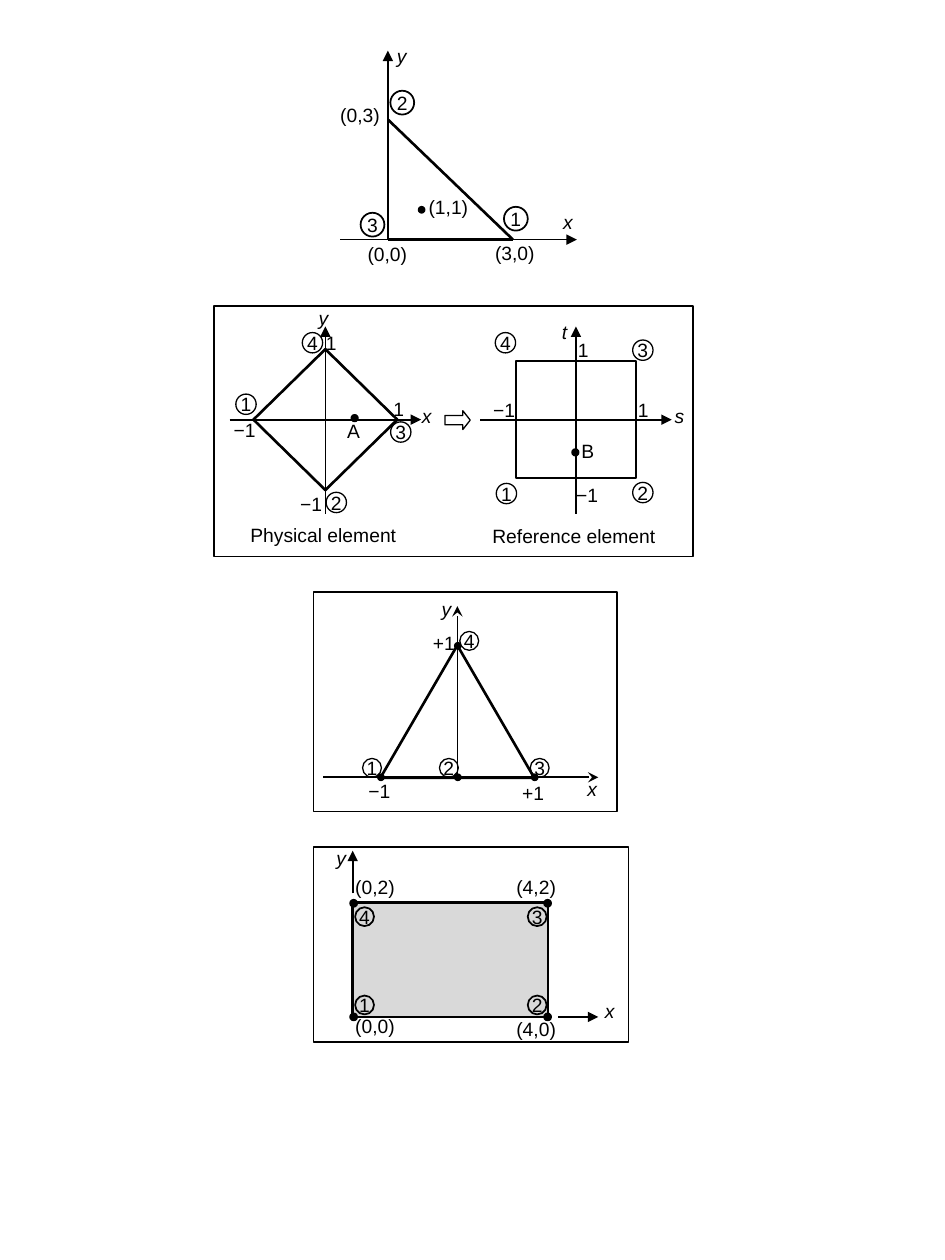
from itertools import product

from lxml.etree import SubElement
from pptx import Presentation
from pptx.dml.color import RGBColor
from pptx.enum.shapes import MSO_CONNECTOR, MSO_SHAPE as Shape
from pptx.enum.text import MSO_ANCHOR as Anchor, PP_ALIGN as Align
from pptx.oxml.ns import qn
from pptx.util import Cm, Pt

BLACK = RGBColor(0x00, 0x00, 0x00)
WHITE = RGBColor(0xFF, 0xFF, 0xFF)
GREY = RGBColor(0xD9, 0xD9, 0xD9)
FONT = "Arial"


class Figure:
    """A group of parts placed in centimetres from the corner of its box."""

    def __init__(self, page, box):
        """Open an empty group for the given box."""
        self.shapes = page.shapes.add_group_shape().shapes
        self.left, self.top, self.width, self.height = box

    def point(self, x, y):
        """Turn a place in the box into a place on the page."""
        return Cm(self.left + x), Cm(self.top + y)

    def style(self, shape, fill, weight):
        """Give a shape its fill and black outline."""
        shape.shadow.inherit = False
        if fill is None:
            shape.fill.background()
        else:
            shape.fill.solid()
            shape.fill.fore_color.rgb = fill
        shape.line.color.rgb = BLACK
        shape.line.width = Pt(weight)

    def letter(self, shape, text, align, italic=False):
        """Put one line of text in a shape."""
        frame = shape.text_frame
        frame.word_wrap = False
        frame.margin_left = frame.margin_right = 0
        frame.margin_top = frame.margin_bottom = 0
        para = frame.paragraphs[0]
        para.text = text
        para.alignment = align
        font = para.font
        font.name, font.size, font.italic = FONT, Pt(11), italic
        font.color.rgb = BLACK

    def shape(self, kind, x, y, width, height, fill=None, weight=1):
        """Add a preset shape by its top left corner."""
        shape = self.shapes.add_shape(kind, *self.point(x, y), Cm(width), Cm(height))
        self.style(shape, fill, weight)
        return shape

    def border(self):
        """Frame the whole box."""
        self.shape(Shape.RECTANGLE, 0, 0, self.width, self.height)

    def disc(self, x, y, size, fill=None, weight=0.75):
        """Add a circle by its centre."""
        return self.shape(Shape.OVAL, x - size / 2, y - size / 2, size, size, fill, weight)

    def dot(self, x, y, size=0.13):
        """Mark a point."""
        self.disc(x, y, size, BLACK)

    def node(self, number, x, y, size=0.38, weight=0.75):
        """Add a circled node number by its centre."""
        ring = self.disc(x, y, size, weight=weight)
        self.letter(ring, number, Align.CENTER)
        ring.text_frame.vertical_anchor = Anchor.MIDDLE

    def label(self, text, x, y, width=0.51, height=0.43, align=Align.CENTER):
        """Add a label, with axis names in italics."""
        box = self.shapes.add_textbox(*self.point(x, y), Cm(width), Cm(height))
        self.letter(box, text, align, italic=text in ("x", "y", "s", "t"))

    def line(self, start, end, weight=1, head=None):
        """Draw a straight line, with an arrowhead if one is named."""
        line = self.shapes.add_connector(
            MSO_CONNECTOR.STRAIGHT, *self.point(*start), *self.point(*end))
        line.line.color.rgb = BLACK
        line.line.width = Pt(weight)
        properties = line.element.spPr
        if head:
            SubElement(properties.find(qn("a:ln")), qn("a:tailEnd"), type=head)
        SubElement(properties, qn("a:effectLst"))

    def polygon(self, corners):
        """Outline a closed element."""
        first, *rest = [self.point(*corner) for corner in corners]
        builder = self.shapes.build_freeform(*first)
        builder.add_line_segments(rest, close=True)
        self.style(builder.convert_to_shape(), None, 1.5)


def draw_right_triangle(page, box):
    """Draw the three-node triangle on its axes."""
    figure = Figure(page, box)
    origin, right, top = (1.19, 3.94), (3.71, 3.94), (1.19, 1.52)
    figure.line(origin, (1.19, 0.13), head="triangle")
    figure.line((0.23, 3.94), (5, 3.94), head="triangle")
    for start, end in ((right, top), (origin, top), (origin, right)):
        figure.line(start, end, 1.5)
    for text, x, y in (("(0,0)", 0.78, 3.99), ("(3,0)", 3.35, 3.97),
                       ("(0,3)", 0.23, 1.2), ("(1,1)", 2.01, 3.05)):
        figure.label(text, x, y, 0.81, 0.48, Align.LEFT)
    for number, x, y in (("1", 3.77, 3.52), ("3", 0.88, 3.64), ("2", 1.48, 1.18)):
        figure.node(number, x, y, 0.48, 1)
    figure.dot(1.87, 3.34)
    figure.label("x", 4.72, 3.35, 0.2, 0.48)
    figure.label("y", 1.37, 0, 0.2, 0.48)


def draw_mapping(page, box):
    """Draw the physical element mapped to the reference element."""
    figure = Figure(page, box)
    middle, physical, reference = 2.29, 2.24, 7.29
    for centre in (physical, reference):
        figure.line((centre - 1.93, middle), (centre + 1.93, middle), head="triangle")
        figure.line((centre, 4.19), (centre, 0.41), head="triangle")
    diamond = ((0, -1.42), (-1.45, 0), (0, 1.42), (1.45, 0))
    square = ((-1.21, 1.18), (-1.21, -1.18), (1.21, -1.18), (1.21, 1.18))
    for centre, corners in ((physical, diamond), (reference, square)):
        figure.polygon([(centre + x, middle + y) for x, y in corners])
    for text, x, y in (("−1", 1.7, 3.76), ("−1", 0.36, 2.26),
                       ("−1", 7.26, 3.58), ("−1", 5.59, 1.85)):
        figure.label(text, x, y)
    for text, x, y in (("1", 3.53, 1.83), ("1", 2.17, 0.51), ("1", 8.46, 1.85),
                       ("1", 7.25, 0.64), ("y", 2.01, 0), ("x", 4.09, 1.98),
                       ("s", 9.19, 1.98), ("t", 6.87, 0.28),
                       ("A", 2.62, 2.29), ("B", 7.34, 2.69)):
        figure.label(text, x, y, 0.38)
    figure.dot(2.83, 2.26, 0.14)
    figure.dot(7.28, 2.95, 0.14)
    for number, x, y in (("1", 0.64, 1.98), ("2", 2.46, 3.96), ("3", 3.76, 2.54),
                         ("4", 1.98, 0.74), ("1", 5.89, 3.78), ("2", 8.64, 3.76),
                         ("3", 8.64, 0.89), ("4", 5.87, 0.74)):
        figure.node(number, x, y, 0.41)
    arrow = figure.shape(Shape.RIGHT_ARROW, 4.65, 2.11, 0.51, 0.38, WHITE, 0.75)
    arrow.adjustments[1] = 0.39
    figure.label("Physical element", 0.36, 4.37, 3.68, 0.56)
    figure.label("Reference element", 5.41, 4.39, 3.68, 0.56)
    figure.border()


def draw_collapsed_triangle(page, box):
    """Draw the four-node triangle with a node in the middle of its base."""
    figure = Figure(page, box)
    figure.shape(Shape.ISOSCELES_TRIANGLE, 1.35, 1.07, 3.1, 2.67, weight=1.5)
    figure.line((0.2, 3.73), (5.74, 3.73), head="stealth")
    figure.line((2.9, 3.73), (2.9, 0.28), head="stealth")
    for text, x, y in (("−1", 1.04, 3.76), ("+1", 4.14, 3.81), ("+1", 2.34, 0.79),
                       ("x", 5.33, 3.73), ("y", 2.39, 0.1)):
        figure.label(text, x, y, 0.58, 0.48)
    for number, x, y in (("1", 1.18, 3.54), ("2", 2.73, 3.54),
                         ("3", 4.56, 3.54), ("4", 3.14, 0.98)):
        figure.node(number, x, y)
    for x, y in ((1.36, 3.73), (2.91, 3.73), (4.46, 3.73), (2.91, 1.08)):
        figure.dot(x, y)
    figure.border()


def draw_rectangle(page, box):
    """Draw the shaded four-node rectangle."""
    figure = Figure(page, box)
    figure.shape(Shape.RECTANGLE, 0.79, 1.12, 3.94, 2.31, GREY, 1.5)
    for x, y in product((0.81, 4.72), (1.14, 3.43)):
        figure.dot(x, y, 0.15)
    for number, (y, x) in zip("4312", product((1.41, 3.19), (1.03, 4.51))):
        figure.node(number, x, y, weight=1)
    figure.line((4.93, 3.43), (5.74, 3.43), head="triangle")
    figure.line((0.79, 0.94), (0.79, 0.08), head="triangle")
    figure.label("x", 5.87, 3.07, 0.2, 0.56)
    figure.label("y", 0.46, 0, 0.2, 0.56)
    figure.border()
    for text, x, y in (("(0,2)", 0.84, 0.58), ("(4,2)", 4.09, 0.58),
                       ("(0,0)", 0.84, 3.38), ("(4,0)", 4.09, 3.43)):
        figure.label(text, x, y, 0.81, 0.48, Align.LEFT)


def main():
    """Build the page of finite element figures."""
    deck = Presentation()
    deck.slide_width, deck.slide_height = Cm(19.05), Cm(25.4)
    page = deck.slides.add_slide(deck.slide_layouts[6])
    draw_right_triangle(page, (6.63, 0.89, 5, 4.52))
    draw_mapping(page, (4.32, 6.17, 9.65, 5.05))
    draw_rectangle(page, (6.32, 17.07, 6.35, 3.94))
    draw_collapsed_triangle(page, (6.32, 11.94, 6.12, 4.42))
    deck.save("out.pptx")


if __name__ == "__main__":
    main()
